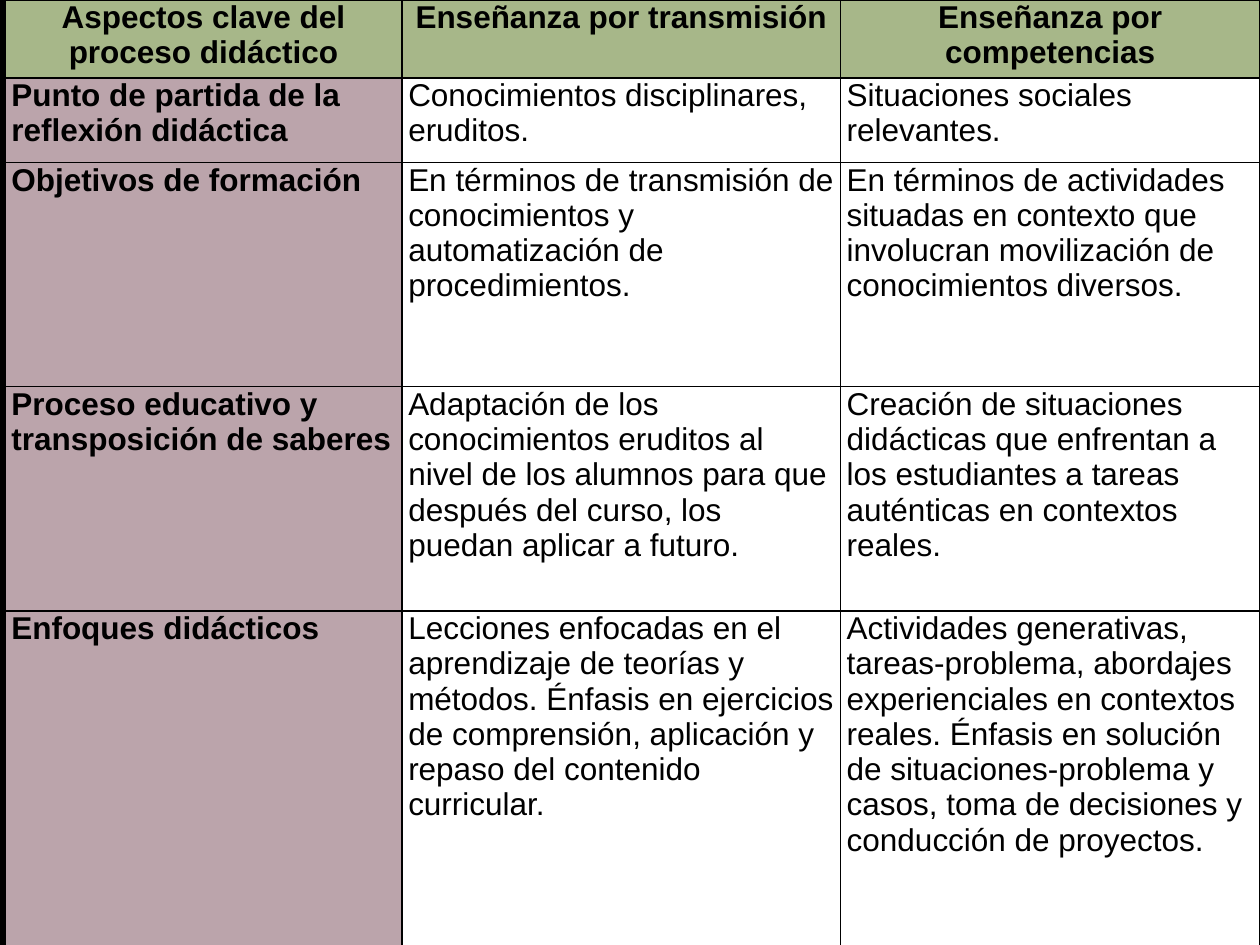
import pptx
import pptx.dml.color
import pptx.enum.text
import pptx.oxml
import pptx.oxml.ns
import pptx.util
from pptx.util import Inches

BLACK = pptx.dml.color.RGBColor(0x00, 0x00, 0x00)
WHITE = pptx.dml.color.RGBColor(0xFF, 0xFF, 0xFF)
GREEN = pptx.dml.color.RGBColor(0xA7, 0xB7, 0x89)
MAUVE = pptx.dml.color.RGBColor(0xBB, 0xA4, 0xAB)

COLUMN_WIDTHS = [3.15, 3.48, 3.33]
ROW_HEIGHTS = [0.62, 0.67, 1.78, 1.78, 2.66]
CELL_MARGINS = {
    "margin_left": Inches(0.05),
    "margin_right": Inches(0.05),
    "margin_top": 0,
    "margin_bottom": 0,
}
TEXT_FORMAT = {"name": "Arial", "size": pptx.util.Pt(18)}

ROWS = [
    ["Aspectos clave del proceso didáctico",
     "Enseñanza por transmisión",
     "Enseñanza por competencias"],
    ["Punto de partida de la reflexión didáctica",
     "Conocimientos disciplinares, eruditos.",
     "Situaciones sociales relevantes."],
    ["Objetivos de formación",
     "En términos de transmisión de conocimientos y automatización de "
     "procedimientos.",
     "En términos de actividades situadas en contexto que involucran "
     "movilización de conocimientos diversos."],
    ["Proceso educativo y transposición de saberes",
     "Adaptación de los conocimientos eruditos al nivel de los alumnos para "
     "que después del curso, los puedan aplicar a futuro.",
     "Creación de situaciones didácticas que enfrentan a los estudiantes a "
     "tareas auténticas en contextos reales."],
    ["Enfoques didácticos",
     "Lecciones enfocadas en el aprendizaje de teorías y métodos. Énfasis en "
     "ejercicios de comprensión, aplicación y repaso del contenido curricular.",
     "Actividades generativas, tareas-problema, abordajes experienciales en "
     "contextos reales. Énfasis en solución de situaciones-problema y casos, "
     "toma de decisiones y conducción de proyectos."],
]


def set_attributes(target, values):
    for name, value in values.items():
        setattr(target, name, value)


def add_borders(cell, color, width):
    """Draw all four cell borders; call before the fill is set."""
    properties = cell._tc.get_or_add_tcPr()
    for side in ("lnL", "lnR", "lnT", "lnB"):
        properties.append(pptx.oxml.parse_xml(
            f'<a:{side} {pptx.oxml.ns.nsdecls("a")} w="{pptx.util.Pt(width)}">'
            f'<a:solidFill><a:srgbClr val="{color}"/></a:solidFill></a:{side}>'
        ))


def fill_cell(cell, text, fill, bold, alignment):
    set_attributes(cell, CELL_MARGINS)
    add_borders(cell, BLACK, 1)
    cell.fill.solid()
    cell.fill.fore_color.rgb = fill
    para = cell.text_frame.paragraphs[0]
    para.alignment = alignment
    span = para.add_run()
    span.text = text
    set_attributes(span.font, {**TEXT_FORMAT, "bold": bold})
    span.font.color.rgb = BLACK


def add_comparison_table(page):
    frame = page.shapes.add_table(
        len(ROW_HEIGHTS), len(COLUMN_WIDTHS),
        Inches(0.04), 0, Inches(9.96), Inches(7.5))
    table = frame.table
    for column, width in zip(table.columns, COLUMN_WIDTHS):
        column.width = Inches(width)
    for row, height in zip(table.rows, ROW_HEIGHTS):
        row.height = Inches(height)

    # Green header row, mauve first column, white body
    align = pptx.enum.text.PP_ALIGN
    for r, texts in enumerate(ROWS):
        for c, text in enumerate(texts):
            fill = GREEN if r == 0 else MAUVE if c == 0 else WHITE
            fill_cell(table.cell(r, c), text, fill,
                      bold=r == 0 or c == 0,
                      alignment=align.CENTER if r == 0 else align.LEFT)


def main():
    deck = pptx.Presentation()
    deck.slide_width, deck.slide_height = Inches(10), Inches(7.5)
    page = deck.slides.add_slide(deck.slide_layouts[6])

    # Black background
    page.background.fill.solid()
    page.background.fill.fore_color.rgb = BLACK

    add_comparison_table(page)
    deck.save("out.pptx")


if __name__ == "__main__":
    main()
